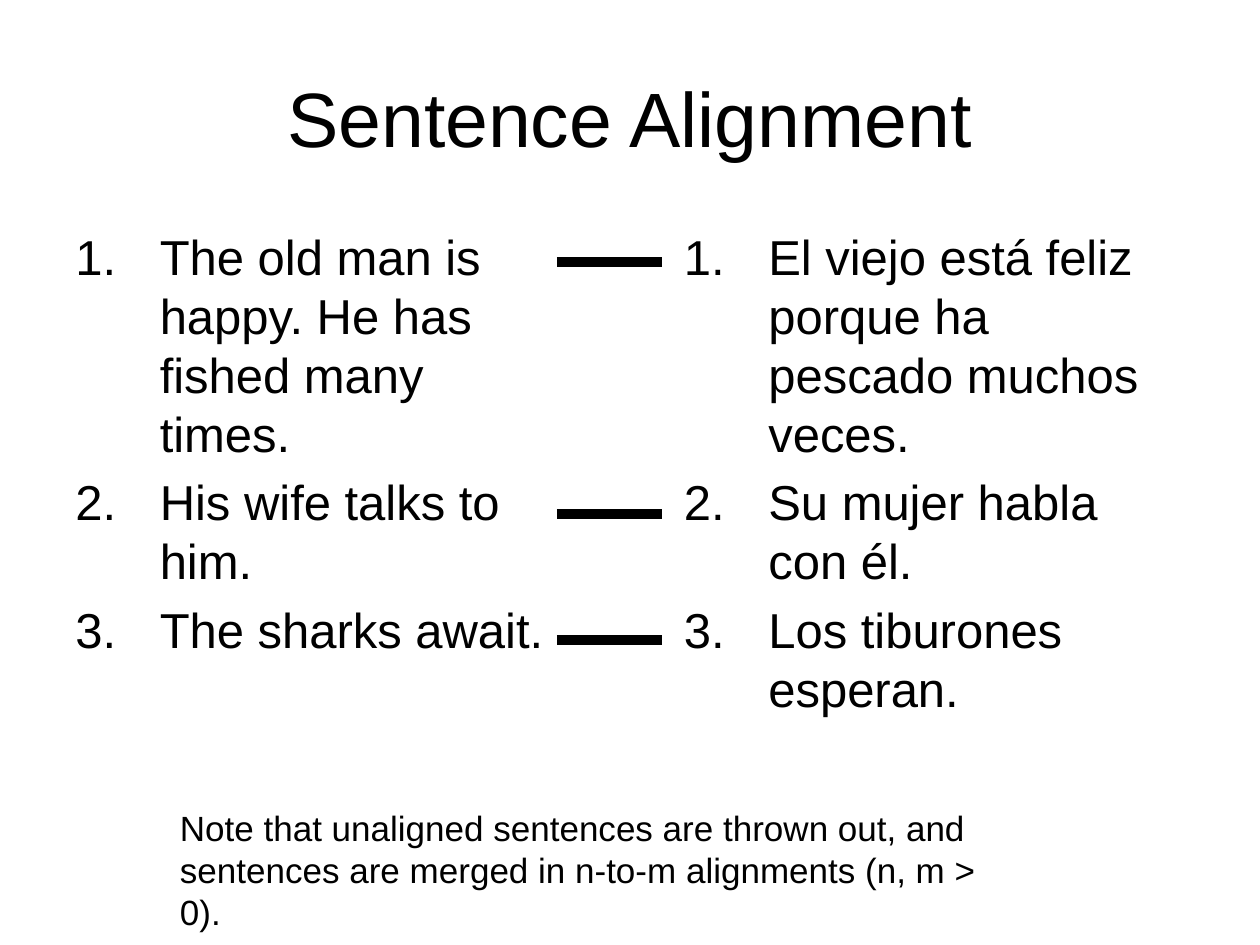
import pptx
import pptx.dml.color
import pptx.enum.shapes
import pptx.enum.text
import pptx.oxml.ns
import pptx.util
from lxml import etree
from pptx.util import Inches

COLORS = {"text": "000000", "link": "000000", "background": "FFFFFF"}
FONT = "Arial"
ENGLISH = [
    "The old man is happy. He has fished many times.",
    "His wife talks to him.",
    "The sharks await.",
]
SPANISH = [
    "El viejo está feliz porque ha pescado muchos veces.",
    "Su mujer habla con él.",
    "Los tiburones esperan.",
]
NOTE = [
    "Note that unaligned sentences are thrown out, and",
    "sentences are merged in n-to-m alignments (n, m > 0).",
]
LINK_HEIGHTS = [2.08, 4.08, 5.08]


def color(name):
    return pptx.dml.color.RGBColor.from_string(COLORS[name])


def add_text(slide, box, lines, size):
    """Add a wrapping text box with one paragraph per line."""
    shape = slide.shapes.add_textbox(*map(Inches, box))
    frame = shape.text_frame
    frame.word_wrap = True
    for index, line in enumerate(lines):
        paragraph = frame.add_paragraph() if index else frame.paragraphs[0]
        run = paragraph.add_run()
        run.text = line
        run.font.name = FONT
        run.font.size = pptx.util.Pt(size)
        run.font.color.rgb = color("text")
    return frame


def add_title(slide, text):
    frame = add_text(slide, (0.5, 0.3, 9, 1.25), [text], 44)
    frame.vertical_anchor = pptx.enum.text.MSO_ANCHOR.MIDDLE
    frame.paragraphs[0].alignment = pptx.enum.text.PP_ALIGN.CENTER


def add_numbered_list(slide, left, sentences):
    size = 28
    frame = add_text(slide, (left, 1.75, 4, 4.95), sentences, size)
    for paragraph in frame.paragraphs:
        paragraph.space_before = pptx.util.Pt(0.2 * size)
        properties = paragraph._p.get_or_add_pPr()
        properties.set("marL", str(Inches(0.67)))
        properties.set("indent", str(Inches(-0.67)))
        number = etree.SubElement(properties, pptx.oxml.ns.qn("a:buAutoNum"))
        number.set("type", "arabicPeriod")


def add_link(slide, y):
    """Add a thick bar joining a pair of aligned sentences."""
    connector = slide.shapes.add_connector(
        pptx.enum.shapes.MSO_CONNECTOR.STRAIGHT,
        Inches(4.42), Inches(y), Inches(5.25), Inches(y),
    )
    connector.line.color.rgb = color("link")
    connector.line.width = pptx.util.Pt(6)
    etree.SubElement(connector._element.spPr, pptx.oxml.ns.qn("a:effectLst"))


def main():
    presentation = pptx.Presentation()
    presentation.slide_width = Inches(10)
    presentation.slide_height = Inches(7.5)
    slide = presentation.slides.add_slide(presentation.slide_layouts[6])
    slide.background.fill.solid()
    slide.background.fill.fore_color.rgb = color("background")

    add_title(slide, "Sentence Alignment")

    # Parallel sentences and the links between them
    add_numbered_list(slide, 0.5, ENGLISH)
    add_numbered_list(slide, 5.33, SPANISH)
    for y in LINK_HEIGHTS:
        add_link(slide, y)

    # Closing note
    add_text(slide, (1.33, 6.35, 6.8, 0.77), NOTE, 20)

    presentation.save("out.pptx")


if __name__ == "__main__":
    main()
